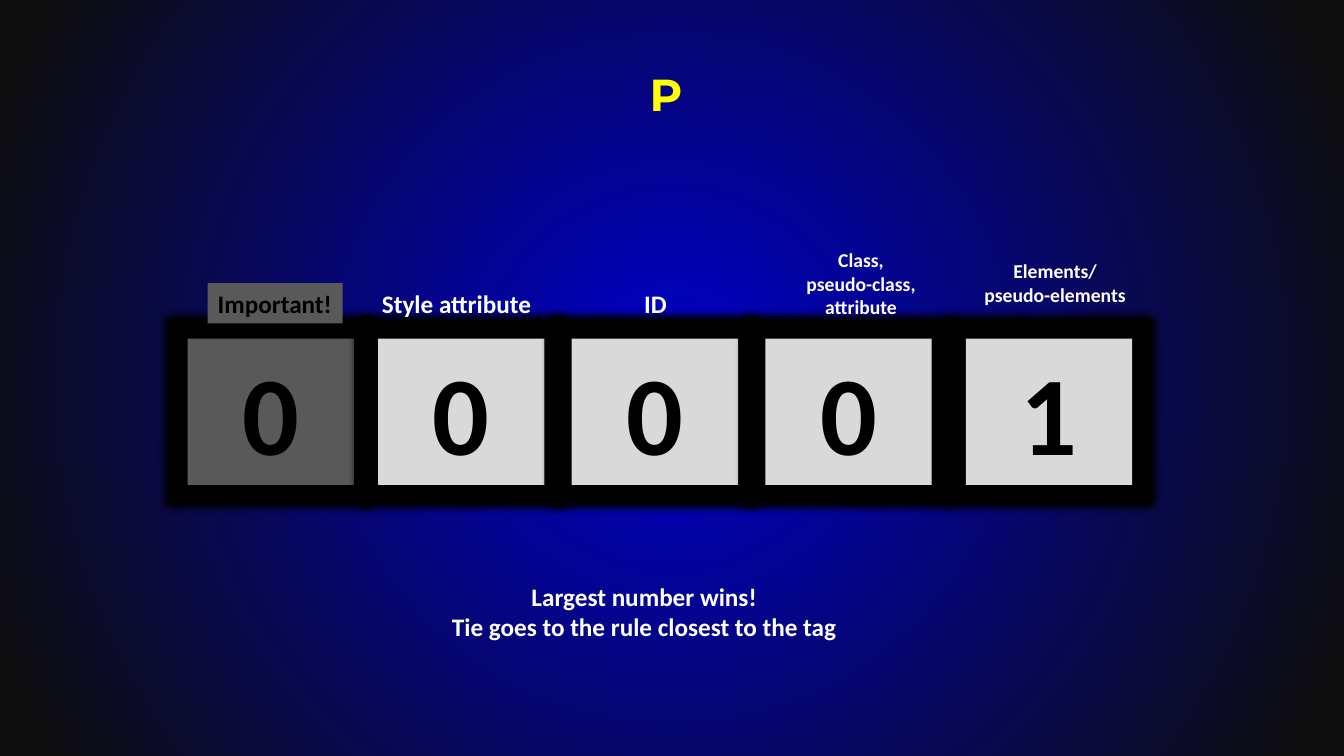
from lxml import etree
from pptx import Presentation
from pptx.dml.color import RGBColor
from pptx.enum.shapes import MSO_SHAPE
from pptx.enum.text import MSO_ANCHOR, MSO_AUTO_SIZE, PP_ALIGN
from pptx.oxml.ns import qn
from pptx.util import Inches, Pt

RECTANGLE = MSO_SHAPE.RECTANGLE
CENTER, LEFT = PP_ALIGN.CENTER, PP_ALIGN.LEFT
TOP, MIDDLE = MSO_ANCHOR.TOP, MSO_ANCHOR.MIDDLE
GROW = MSO_AUTO_SIZE.SHAPE_TO_FIT_TEXT
NO_RESIZE = MSO_AUTO_SIZE.NONE

BLACK, WHITE, YELLOW = "000000", "FFFFFF", "FFFF00"
DARK_GRAY, LIGHT_GRAY = "595959", "D9D9D9"
BLUE, NEAR_BLACK = "0000CC", "0D0D0D"


def color(value):
    return RGBColor.from_string(value)


class SpecificitySlide:
    """Hold the style and the current slide, and add its elements."""

    font_name = "Calibri"
    glow_radius = Pt(11)

    def __init__(self, slide):
        self.slide = slide

    def background(self, stops):
        fill = self.slide.background.fill
        fill.gradient()
        for stop, (position, value) in zip(fill.gradient_stops, stops):
            stop.position = position
            stop.color.rgb = color(value)
        gradient = next(self.slide.element.iter(qn("a:gradFill")))
        gradient.remove(gradient.find(qn("a:lin")))
        radial = etree.SubElement(gradient, qn("a:path"), path="circle")
        edges = dict.fromkeys("ltrb", "50000")
        etree.SubElement(radial, qn("a:fillToRect"), edges)

    def set_text(self, shape, lines, size, value, align=CENTER, wrap=False,
                 anchor=TOP, auto_size=GROW, name=font_name):
        frame = shape.text_frame
        frame_format = {"word_wrap": wrap, "vertical_anchor": anchor,
                        "auto_size": auto_size}
        for attribute, setting in frame_format.items():
            setattr(frame, attribute, setting)
        font_format = {"name": name, "size": Pt(size), "bold": True}
        for index, line in enumerate(lines):
            paragraph = frame.add_paragraph() if index else frame.paragraphs[0]
            paragraph.alignment = align
            run = paragraph.add_run()
            run.text = line
            for attribute, setting in font_format.items():
                setattr(run.font, attribute, setting)
            run.font.color.rgb = color(value)

    def text(self, box, lines, size, value=WHITE, **layout):
        shape = self.slide.shapes.add_textbox(*map(Inches, box))
        self.set_text(shape, lines, size, value, **layout)

    def rectangle(self, box, fill, line, size, **layout):
        shape = self.slide.shapes.add_shape(RECTANGLE, *map(Inches, box))
        shape.shadow.inherit = False
        shape.fill.solid()
        shape.fill.fore_color.rgb = color(fill)
        shape.line.fill.background()
        self.set_text(shape, [line], size, BLACK, **layout)
        return shape

    def digit_tile(self, left, digit, fill):
        shape = self.rectangle((left, 3.36, 1.65, 1.45), fill, digit, 80,
                               wrap=True)
        effects = shape.element.spPr.find(qn("a:effectLst"))
        glow = etree.SubElement(effects, qn("a:glow"),
                                rad=str(self.glow_radius))
        etree.SubElement(glow, qn("a:srgbClr"), val=BLACK)


def main():
    presentation = Presentation()
    presentation.slide_width = Inches(13.33)
    presentation.slide_height = Inches(7.5)
    blank = presentation.slide_layouts[6]
    page = SpecificitySlide(presentation.slides.add_slide(blank))
    page.background([(0, BLUE), (0.95, NEAR_BLACK)])

    tiles = [(1.86, "0", DARK_GRAY), (3.75, "0", LIGHT_GRAY),
             (5.67, "0", LIGHT_GRAY), (7.59, "0", LIGHT_GRAY),
             (9.58, "1", LIGHT_GRAY)]
    for left, digit, fill in tiles:
        page.digit_tile(left, digit, fill)

    page.rectangle((2.06, 2.81, 1.34, 0.4), DARK_GRAY, "Important!", 18,
                   align=LEFT)
    page.text((3.69, 2.81, 1.7, 0.4), ["Style attribute"], 18, align=LEFT)
    page.text((6.29, 2.81, 0.43, 0.4), ["ID"], 18, align=LEFT)
    page.text((7.88, 2.41, 1.32, 0.81), ["Class, pseudo-class, attribute"],
              14, wrap=True)
    page.text((9.66, 2.52, 1.61, 0.57), ["Elements/", "pseudo-elements"], 14)
    page.text((4.37, 5.72, 4.04, 0.71),
              ["Largest number wins!",
               "Tie goes to the rule closest to the tag"], 18)
    page.text((0.67, 0.3, 12, 1.25), ["P "], 32, YELLOW, wrap=True,
              anchor=MIDDLE, auto_size=NO_RESIZE, name="Montserrat")

    presentation.save("out.pptx")


if __name__ == "__main__":
    main()
